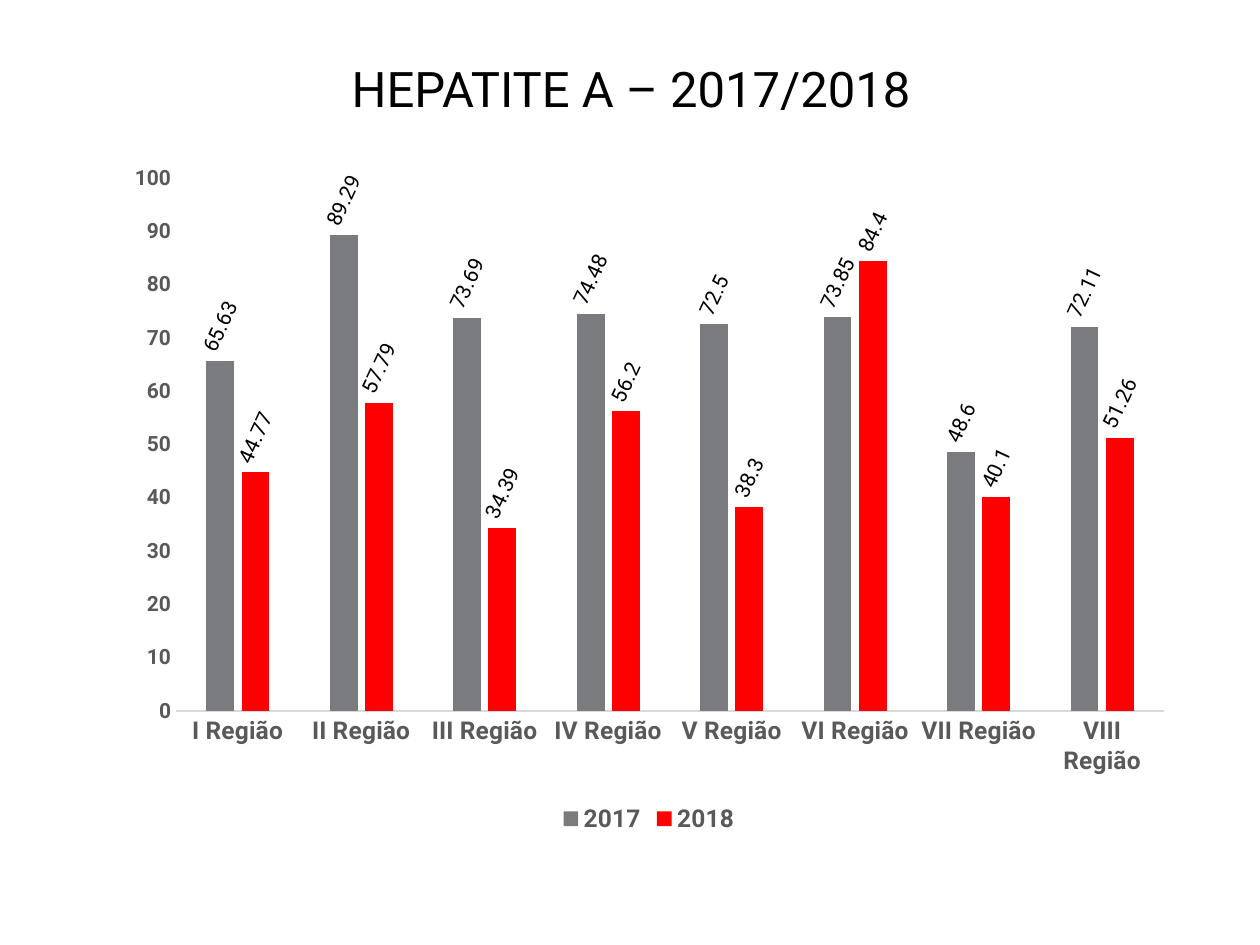
"""Build a slide comparing hepatitis A by region in 2017 and 2018."""
from dataclasses import dataclass

from pptx import Presentation
from pptx.chart.chart import Chart
from pptx.chart.data import CategoryChartData
from pptx.dml.color import RGBColor
from pptx.enum.chart import XL_CHART_TYPE, XL_LABEL_POSITION, XL_LEGEND_POSITION, XL_TICK_MARK
from pptx.enum.text import MSO_ANCHOR, PP_ALIGN
from pptx.oxml import parse_xml
from pptx.oxml.ns import nsdecls
from pptx.slide import Slide
from pptx.text.text import Font
from pptx.util import Emu, Pt

COLUMN_CLUSTERED = XL_CHART_TYPE.COLUMN_CLUSTERED
OUTSIDE_END = XL_LABEL_POSITION.OUTSIDE_END
LEGEND_BOTTOM = XL_LEGEND_POSITION.BOTTOM
NO_TICK = XL_TICK_MARK.NONE
MIDDLE = MSO_ANCHOR.MIDDLE
CENTER = PP_ALIGN.CENTER

PX_PER_INCH = 126
EMU_PER_INCH = 914400
FONT_NAME = "Roboto"
LABEL_ROTATION = -65 * 60000

BLACK = RGBColor(0x00, 0x00, 0x00)
DARK_GRAY = RGBColor(0x59, 0x59, 0x59)
LIGHT_GRAY = RGBColor(0xD9, 0xD9, 0xD9)
GRAY = RGBColor(0x79, 0x7B, 0x7E)
RED = RGBColor(0xFF, 0x00, 0x00)


@dataclass(frozen=True)
class Box:
    left: int
    top: int
    width: int
    height: int


@dataclass(frozen=True)
class YearSeries:
    name: str
    values: tuple[float, ...]
    color: RGBColor


TITLE_BOX = Box(113, 50, 1036, 76)
CHART_BOX = Box(113, 151, 1072, 688)
PLOT_BOX = Box(176, 178, 988, 533)

REGIONS = [f"{numeral} Região" for numeral in ("I", "II", "III", "IV", "V", "VI", "VII", "VIII")]
YEARS = (
    YearSeries("2017", (65.63, 89.29, 73.69, 74.48, 72.5, 73.85, 48.6, 72.11), GRAY),
    YearSeries("2018", (44.77, 57.79, 34.39, 56.2, 38.3, 84.4, 40.1, 51.26), RED),
)


def px(length: int) -> Emu:
    """Convert pixels to EMU."""
    return Emu(round(length * EMU_PER_INCH / PX_PER_INCH))


def set_font(font: Font, size: int, color: RGBColor, bold: bool = False) -> None:
    """Apply the slide's typeface with the given size and colour."""
    font.name = FONT_NAME
    font.size = Pt(size)
    font.bold = bold
    font.color.rgb = color


def draw_title(slide: Slide, text: str, box: Box) -> None:
    """Place and format the title placeholder."""
    title = slide.shapes.title
    title.left, title.top = px(box.left), px(box.top)
    title.width, title.height = px(box.width), px(box.height)
    title.text_frame.text = text
    title.text_frame.vertical_anchor = MIDDLE
    paragraph = title.text_frame.paragraphs[0]
    paragraph.alignment = CENTER
    set_font(paragraph.font, 28, BLACK)


def place_plot(chart: Chart, chart_box: Box, plot_box: Box) -> None:
    """Fix the inner plot area inside the chart frame."""
    fractions = {
        "x": (plot_box.left - chart_box.left) / chart_box.width,
        "y": (plot_box.top - chart_box.top) / chart_box.height,
        "w": plot_box.width / chart_box.width,
        "h": plot_box.height / chart_box.height,
    }
    modes = '<c:xMode val="edge"/><c:yMode val="edge"/>'
    lengths = "".join(f'<c:{name} val="{value:.4f}"/>' for name, value in fractions.items())
    plot_area = chart.plots[0]._element.getparent()
    for layout in plot_area.xpath("c:layout"):
        plot_area.remove(layout)
    plot_area.insert(0, parse_xml(
        f'<c:layout {nsdecls("c")}><c:manualLayout><c:layoutTarget val="inner"/>'
        f"{modes}{lengths}</c:manualLayout></c:layout>"
    ))


def format_axes(chart: Chart) -> None:
    """Style both axes and hide the gridlines."""
    for axis, size in ((chart.category_axis, 14), (chart.value_axis, 12)):
        axis.major_tick_mark = NO_TICK
        axis.minor_tick_mark = NO_TICK
        axis.has_major_gridlines = False
        set_font(axis.tick_labels.font, size, DARK_GRAY, True)
    category_line = chart.category_axis.format.line
    category_line.color.rgb = LIGHT_GRAY
    category_line.width = Pt(0.75)
    value_axis = chart.value_axis
    value_axis.format.line.fill.background()
    value_axis.minimum_scale = 0
    value_axis.maximum_scale = 100
    value_axis.major_unit = 10


def format_series(chart: Chart, years: tuple[YearSeries, ...]) -> None:
    """Colour the columns and add slanted value labels."""
    for series, year in zip(chart.plots[0].series, years):
        series.format.fill.solid()
        series.format.fill.fore_color.rgb = year.color
        labels = series.data_labels
        labels.show_value = True
        labels.position = OUTSIDE_END
        set_font(labels.font, 12, BLACK)
        body = labels._element.xpath("c:txPr/a:bodyPr")[0]
        body.set("rot", str(LABEL_ROTATION))
        body.set("vert", "horz")


def draw_chart(slide: Slide, box: Box, plot_box: Box, years: tuple[YearSeries, ...]) -> None:
    """Draw the clustered columns with their legend."""
    chart_data = CategoryChartData()
    chart_data.categories = REGIONS
    for year in years:
        chart_data.add_series(year.name, year.values)
    chart = slide.shapes.add_chart(
        COLUMN_CLUSTERED, px(box.left), px(box.top), px(box.width), px(box.height), chart_data
    ).chart
    set_font(chart.font, 10, BLACK)
    chart.has_title = False
    chart.has_legend = True
    chart.legend.position = LEGEND_BOTTOM
    chart.legend.include_in_layout = False
    set_font(chart.legend.font, 14, DARK_GRAY, True)
    plot = chart.plots[0]
    plot.vary_by_categories = False
    plot.gap_width = 219
    plot.overlap = -27
    format_axes(chart)
    format_series(chart, years)
    place_plot(chart, box, plot_box)


def main() -> None:
    """Create and save the presentation."""
    presentation = Presentation()
    presentation.slide_width, presentation.slide_height = px(1260), px(945)
    slide = presentation.slides.add_slide(presentation.slide_layouts.get_by_name("Title Only"))
    draw_title(slide, "HEPATITE A – 2017/2018", TITLE_BOX)
    draw_chart(slide, CHART_BOX, PLOT_BOX, YEARS)
    presentation.save("out.pptx")


if __name__ == "__main__":
    main()
